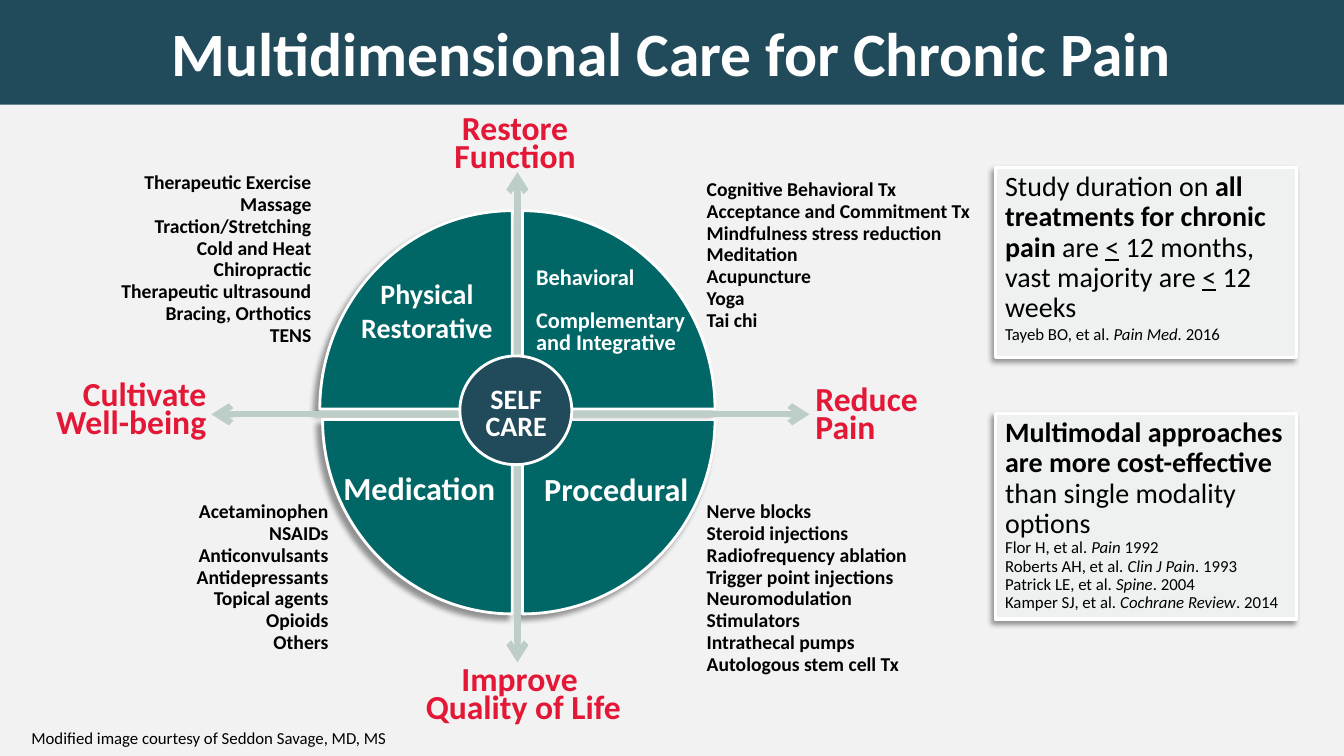
from lxml.etree import SubElement
from pptx import Presentation
from pptx.dml.color import RGBColor
from pptx.enum.shapes import MSO_CONNECTOR as LINK, MSO_SHAPE as SHAPE
from pptx.enum.text import MSO_ANCHOR as ANCHOR, PP_ALIGN as ALIGN
from pptx.oxml.ns import qn
from pptx.util import Cm, Pt

HUES = {
    "page": "F2F2F2", "navy": "214A5B", "teal": "006666", "red": "E31837",
    "sage": "BDCDC7", "card": "EEF1F0", "white": "FFFFFF", "black": "000000",
}
FONT = "Calibri"
LEFT, MID, RIGHT = ALIGN.LEFT, ALIGN.CENTER, ALIGN.RIGHT
MID_X, MID_Y, GAP = 13.04, 10.44, 0.13
BEND = 0.55  # handle length of a quarter arc, as a share of its radius

# Sides of the wheel (x, y), then its radii
WEDGES = [
    (-1, -1, 4.85, 5), (-1, 1, 4.78, 4.9), (1, 1, 4.85, 4.9), (1, -1, 4.85, 5),
]
# Box, size, line spacing, alignment, space after, lines
LABELS = [
    ((8.79, 6.85, 3.94, 1.96), 20, 1, MID, 0, ["Physical Restorative"]),
    ((8.03, 11.79, 5.08, 1.17), 23, 0.9, MID, 0, ["Medication"]),
    ((13.06, 11.89, 4.95, 1.07), 23, 0.8, MID, 0, ["Procedural"]),
    ((13.26, 6.63, 4.67, 2.46), 16, 0.8, LEFT, 15.6,
     ["Behavioral", "Complementary and Integrative"]),
]
LISTS = [
    ((1.47, 4.28, 6.63, 4.72), RIGHT,
     ["Therapeutic Exercise", "Massage", "Traction/Stretching",
      "Cold and Heat", "Chiropractic", "Therapeutic ultrasound",
      "Bracing, Orthotics", "TENS"]),
    ((2.69, 12.57, 5.84, 4.17), RIGHT,
     ["Acetaminophen", "NSAIDs", "Anticonvulsants", "Antidepressants",
      "Topical agents", "Opioids", "Others"]),
    ((17.56, 12.57, 6.71, 4.72), LEFT,
     ["Nerve blocks", "Steroid injections", "Radiofrequency ablation",
      "Trigger point injections", "Neuromodulation", "Stimulators",
      "Intrathecal pumps", "Autologous stem cell Tx"]),
    ((17.56, 4.45, 7.37, 4.17), LEFT,
     ["Cognitive Behavioral Tx", "Acceptance and Commitment Tx",
      "Mindfulness stress reduction", "Meditation", "Acupuncture", "Yoga",
      "Tai chi"]),
]
GOALS = [
    ((0.4, 9.55, 5.05, 1.73), RIGHT, ["Cultivate", "Well-being"]),
    ((20.3, 9.68, 3.45, 1.73), LEFT, ["Reduce Pain"]),
    ((10.27, 16.72, 5.84, 1.73), MID, ["Improve ", "Quality of Life"]),
    ((11, 2.84, 3.96, 1.73), MID, ["Restore Function"]),
]
# Box, claim, sources, line spacing of the sources; a run is (text, style)
CARDS = [
    ((25.08, 4.22, 7.6, 4.78),
     [("Study duration on ", ""), ("all treatments for chronic pain", "b"),
      (" are ", ""), ("<", "u"), (" 12 months, vast majority are ", ""),
      ("<", "u"), (" 12 weeks", "")],
     [("Tayeb BO, et al. ", "Pain Med. ", "2016")], 1),
    ((25.08, 10.42, 7.6, 5.18),
     [("Multimodal approaches are more cost-effective ", "b"),
      ("than single modality options", "")],
     [("Flor H, et al. ", "Pain", " 1992"),
      ("Roberts AH, et al. ", "Clin J Pain", ". 1993"),
      ("Patrick LE, et al. ", "Spine", ". 2004"),
      ("Kamper SJ, et al. ", "Cochrane Review", ". 2014")], 0.9),
]


def hue(name):
    return RGBColor.from_string(HUES[name])


def bend(shape):
    """Turn the first edge of a three-point outline into a quarter arc."""
    edge = next(shape._element.iter(qn("a:lnTo")))
    start, end, hub = [(int(pt.get("x")), int(pt.get("y")))
                       for pt in shape._element.iter(qn("a:pt"))][:3]
    edge.tag = qn("a:cubicBezTo")
    pulls = [[round(a + BEND * (b - c)) for a, b, c in zip(near, far, hub)]
             for near, far in ((start, end), (end, start))]
    for spot, (x, y) in enumerate(pulls):
        point = SubElement(edge, qn("a:pt"), x=str(x), y=str(y))
        edge.insert(spot, point)


class Board:
    """Holds the slide and draws styled elements on it, in centimetres."""

    def __init__(self, slide):
        self.slide = slide
        self.shapes = slide.shapes
        slide.background.fill.solid()
        slide.background.fill.fore_color.rgb = hue("page")

    def paint(self, shape, fill, width=2):
        shape.shadow.inherit = False
        shape.fill.solid()
        shape.fill.fore_color.rgb = hue(fill)
        shape.line.color.rgb = hue("white")
        shape.line.width = Pt(width)

    def shade(self, shape, dist):
        """Cast a soft shadow to the lower left."""
        glow = SubElement(
            shape._element.spPr.find(qn("a:effectLst")), qn("a:outerShdw"),
            blurRad=str(Pt(4)), dist=str(Pt(dist)), dir="8100000",
            algn="tr", rotWithShape="0")
        tint = SubElement(glow, qn("a:srgbClr"), val=HUES["black"])
        SubElement(tint, qn("a:alpha"), val="40000")

    def style(self, par, size, color="black", bold=None, align=LEFT, lead=1):
        font = par.font
        font.name, font.size, font.bold = FONT, Pt(size), bold
        font.color.rgb = hue(color)
        par.alignment, par.line_spacing = align, lead
        par.space_before = Pt(0)

    def title(self, text, box):
        head = self.shapes.title
        head.left, head.top, head.width, head.height = map(Cm, box)
        head.fill.solid()
        head.fill.fore_color.rgb = hue("navy")
        head.text_frame.text = text
        head.text_frame.vertical_anchor = ANCHOR.MIDDLE
        self.style(head.text_frame.paragraphs[0], 44, "white", True, MID)

    def text(self, box, lines, size, color="black", bold=True, align=LEFT,
             lead=1, after=0, wrap=True):
        frame = self.shapes.add_textbox(*map(Cm, box)).text_frame
        frame.word_wrap = wrap
        frame.text = "\n".join(lines)
        for par in frame.paragraphs:
            self.style(par, size, color, bold, align, lead)
            par.space_after = Pt(after)

    def wedge(self, side, rise, wide, high):
        """Draw a quarter of the wheel, set off from the centre by the gap."""
        x, y = MID_X + side * GAP, MID_Y + rise * GAP
        pen = self.shapes.build_freeform(Cm(x + side * wide), Cm(y))
        pen.add_line_segments([(Cm(x), Cm(y + rise * high)), (Cm(x), Cm(y))])
        shape = pen.convert_to_shape()
        bend(shape)
        self.paint(shape, "teal")
        self.shade(shape, 5)

    def arrow(self, *ends):
        """Draw a straight line with a head at both ends."""
        link = self.shapes.add_connector(LINK.STRAIGHT, *map(Cm, ends))
        link.line.color.rgb = hue("sage")
        link.line.width = Pt(4.5)
        for tag in ("a:headEnd", "a:tailEnd"):
            SubElement(link.line._get_or_add_ln(), qn(tag), type="arrow")
        SubElement(link._element.spPr, qn("a:effectLst"))

    def disc(self, box):
        self.paint(self.shapes.add_shape(SHAPE.OVAL, *map(Cm, box)), "navy")

    def card(self, box, claim, cites, lead):
        shape = self.shapes.add_shape(SHAPE.RECTANGLE, *map(Cm, box))
        self.paint(shape, "card", 2.25)
        self.shade(shape, 3)
        frame = shape.text_frame
        frame.word_wrap = True
        frame.vertical_anchor = ANCHOR.TOP
        self.runs(frame.paragraphs[0], claim, 20, 0.9)
        for name, book, year in cites:
            parts = [(name, ""), (book, "i"), (year, "")]
            self.runs(frame.add_paragraph(), parts, 12, lead)

    def runs(self, par, parts, size, lead):
        self.style(par, size, lead=lead)
        for text, mark in parts:
            run = par.add_run()
            run.text = text
            run.font.bold = mark == "b" or None
            run.font.italic = mark == "i" or None
            run.font.underline = mark == "u" or None


def main():
    deck = Presentation()
    deck.slide_width, deck.slide_height = Cm(33.87), Cm(19.05)
    board = Board(deck.slides.add_slide(deck.slide_layouts[5]))
    board.text((0.54, 18.21, 9.55, 0.76),
               ["Modified image courtesy of Seddon Savage, MD, MS"],
               12, bold=False, wrap=False)
    for wedge in WEDGES:
        board.wedge(*wedge)
    for box, size, lead, align, after, lines in LABELS:
        board.text(box, lines, size, "white", align=align, lead=lead,
                   after=after)
    for box, align, lines in LISTS:
        board.text(box, lines, 14, align=align, lead=0.8, after=2.1)
    for box, align, lines in GOALS:
        board.text(box, lines, 24, "red", align=align, lead=0.7)
    board.arrow(5.33, MID_Y, 20.4, MID_Y)
    board.arrow(MID_X, 4.34, MID_X, 16.69)
    board.disc((11.59, 8.97, 2.82, 2.74))
    board.text((11.56, 9.65, 2.9, 1.65), ["SELF", "CARE"], 20, "white",
               align=MID, lead=0.8)
    for card in CARDS:
        board.card(*card)
    board.title("Multidimensional Care for Chronic Pain",
                (0, -0.05, 33.87, 2.69))
    deck.save("out.pptx")


if __name__ == "__main__":
    main()
